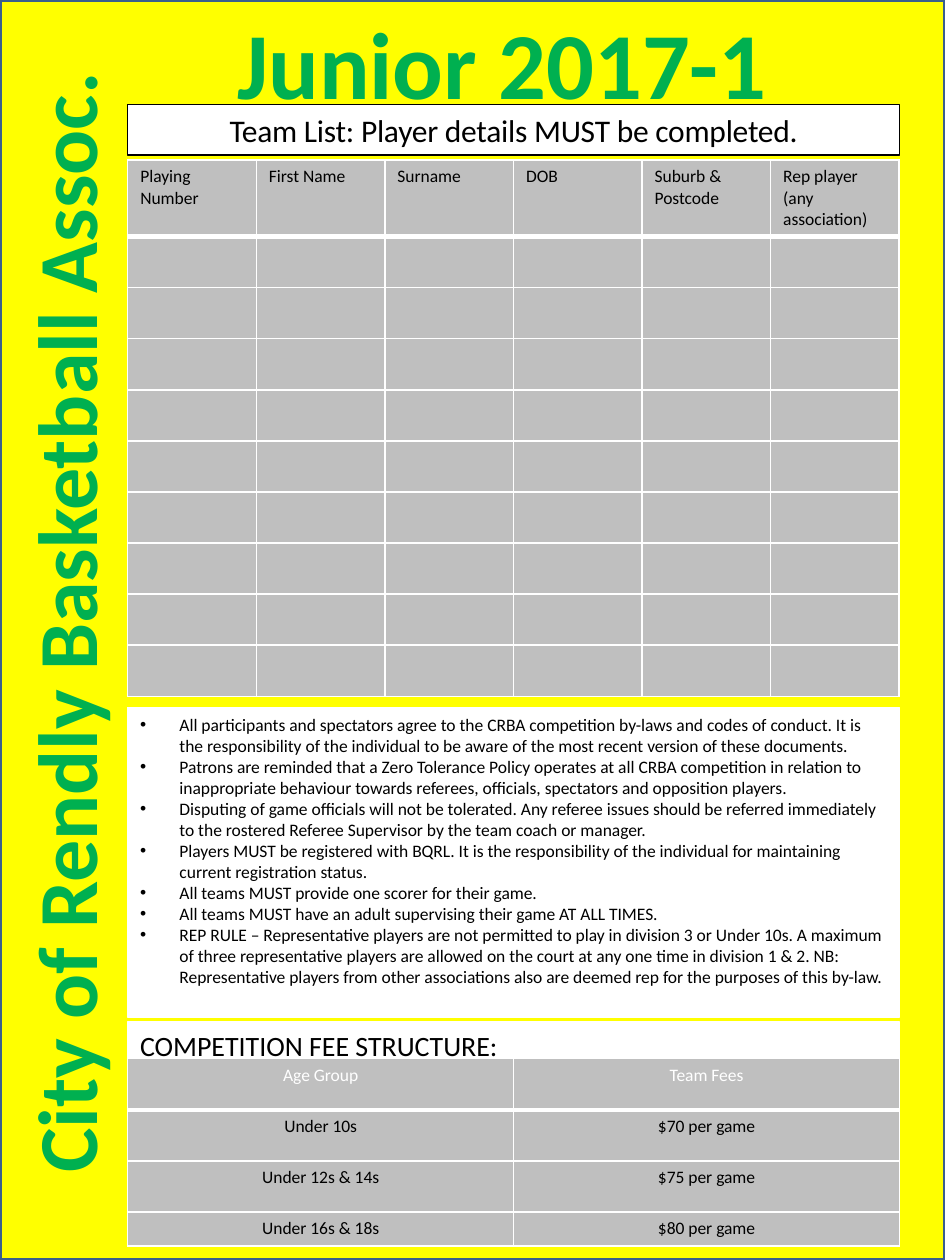
import pptx
import pptx.util
import pptx.dml.color
import pptx.enum.shapes
import pptx.enum.text
import pptx.oxml
import pptx.oxml.ns

Pt = pptx.util.Pt
RGB = pptx.dml.color.RGBColor
ALIGN = pptx.enum.text.PP_ALIGN
ANCHOR = pptx.enum.text.MSO_ANCHOR
NS = pptx.oxml.ns.nsdecls("a")

YELLOW = RGB(0xFF, 0xFF, 0x00)
GREEN = RGB(0x00, 0xB0, 0x50)
WHITE = RGB(0xFF, 0xFF, 0xFF)
BLACK = RGB(0x00, 0x00, 0x00)
GREY = RGB(0xBF, 0xBF, 0xBF)
BLUE = RGB(0x3A, 0x5F, 0x8C)

LEFT, WIDE = 73, 441
LINE = '<a:{tag} {ns} w="{w}"><a:solidFill><a:srgbClr val="FFFFFF"/></a:solidFill></a:{tag}>'


def write(frame, text, size=10, color=BLACK, bold=False, align=ALIGN.LEFT,
          anchor=ANCHOR.TOP, bullet=False, edge=False, space=0):
    """Fill a text frame with one paragraph per line of text."""
    frame.word_wrap = True
    frame.vertical_anchor = anchor
    for i, words in enumerate(text.split("\n")):
        para = frame.add_paragraph() if i else frame.paragraphs[0]
        para.alignment = align
        if bullet:
            props = para._p.get_or_add_pPr()
            props.set("marL", str(Pt(22.5)))
            props.set("indent", str(-Pt(22.5)))
            props.append(pptx.oxml.parse_xml(f'<a:buFont {NS} typeface="Arial"/>'))
            props.append(pptx.oxml.parse_xml(f'<a:buChar {NS} char="•"/>'))
        run = para.add_run()
        run.text = words
        run.font.name = "Calibri"
        run.font.size = Pt(size)
        run.font.bold = bold
        run.font.color.rgb = color
        props = run.font._element
        if space:
            props.set("spc", str(space))
        if edge:
            props.insert(0, pptx.oxml.parse_xml(LINE.format(tag="ln", ns=NS, w=Pt(1.45))))


def panel(left, top, width, height, fill, line, weight=0.75):
    """Add a plain filled rectangle."""
    shape = slide.shapes.add_shape(pptx.enum.shapes.MSO_SHAPE.RECTANGLE,
                                   Pt(left), Pt(top), Pt(width), Pt(height))
    shape.shadow.inherit = False
    shape.fill.solid()
    shape.fill.fore_color.rgb = fill
    shape.line.color.rgb = line
    shape.line.width = Pt(weight)
    return shape


deck = pptx.Presentation()
deck.slide_width, deck.slide_height = Pt(540), Pt(720)
slide = deck.slides.add_slide(deck.slide_layouts[5])

# Background and the two headings
back = panel(0, 0, 540, 720, YELLOW, BLUE, 2)
title = slide.shapes.title
back.element.addnext(title.element)
title.left, title.top, title.width, title.height = Pt(83), Pt(-0.5), Pt(408), Pt(73)
title.text_frame.auto_size = pptx.enum.text.MSO_AUTO_SIZE.NONE
write(title.text_frame, "Junior 2017-1", size=54, color=GREEN, bold=True,
      align=ALIGN.CENTER, edge=True)

side = slide.shapes.add_textbox(Pt(0), Pt(3), Pt(73), Pt(705.5))
side.element.txBody.bodyPr.set("vert", "vert270")
write(side.text_frame, "City of Rendly Basketball Assoc.", size=48, color=GREEN,
      bold=True, align=ALIGN.CENTER, anchor=ANCHOR.MIDDLE, edge=True)

# Panels
bar = panel(LEFT, 59.75, WIDE, 28.8, WHITE, BLACK)
write(bar.text_frame, "Team List: Player details MUST be completed.", size=18,
      align=ALIGN.CENTER, anchor=ANCHOR.MIDDLE, space=-13)

RULES = [
    "All participants and spectators agree to the CRBA competition by-laws and codes of conduct. "
    "It is the responsibility of the individual to be aware of the most recent version of these documents.",
    "Patrons are reminded that a Zero Tolerance Policy operates at all CRBA competition in relation to "
    "inappropriate behaviour towards referees, officials, spectators and opposition players.",
    "Disputing of game officials will not be tolerated. Any referee issues should be referred immediately "
    "to the rostered Referee Supervisor by the team coach or manager.",
    "Players MUST be registered with BQRL. It is the responsibility of the individual for maintaining "
    "current registration status.",
    "All teams MUST provide one scorer for their game.",
    "All teams MUST have an adult supervising their game AT ALL TIMES.",
    "REP RULE – Representative players are not permitted to play in division 3 or Under 10s. "
    "A maximum of three representative players are allowed on the court at any one time in division 1 & 2. "
    "NB: Representative players from other associations also are deemed rep for the purposes of this by-law.",
]
rules = panel(LEFT, 404.25, WIDE, 177, WHITE, WHITE)
write(rules.text_frame, "\n".join(RULES), bullet=True)

fees = panel(LEFT, 584, WIDE, 46, WHITE, WHITE)
write(fees.text_frame, "COMPETITION FEE STRUCTURE:", size=16)

# Tables: top, row heights, cell text, heading colour, alignment
HEADS = ["Playing Number", "First Name", "Surname", "DOB", "Suburb & Postcode",
         "Rep player\n(any association)"]
PRICES = [["Age Group", "Team Fees"], ["Under 10s", "$70 per game"],
          ["Under 12s & 14s", "$75 per game"], ["Under 16s & 18s", "$80 per game"]]
ROW = 29.2
TABLES = [
    (91.5, [43.2] + [ROW] * 9, [HEADS] + [[""] * 6] * 9, BLACK, ALIGN.LEFT),
    (605, [ROW] * 3 + [19.4], PRICES, WHITE, ALIGN.CENTER),
]
for top, highs, data, head, align in TABLES:
    count = len(data[0])
    grid = slide.shapes.add_table(len(data), count, Pt(LEFT), Pt(top),
                                  Pt(WIDE), Pt(sum(highs))).table
    for col in grid.columns:
        col.width = Pt(WIDE / count)
    for r, (high, texts) in enumerate(zip(highs, data)):
        grid.rows[r].height = Pt(high)
        for c, text in enumerate(texts):
            cell = grid.cell(r, c)
            if text:
                write(cell.text_frame, text, color=BLACK if r else head, align=align)
            props = cell._tc.get_or_add_tcPr()
            for tag in ("lnL", "lnR", "lnT", "lnB"):
                weight = 3 if r == 0 and tag == "lnB" else 1
                props.append(pptx.oxml.parse_xml(LINE.format(tag=tag, ns=NS, w=Pt(weight))))
            cell.fill.solid()
            cell.fill.fore_color.rgb = GREY

deck.save("out.pptx")
